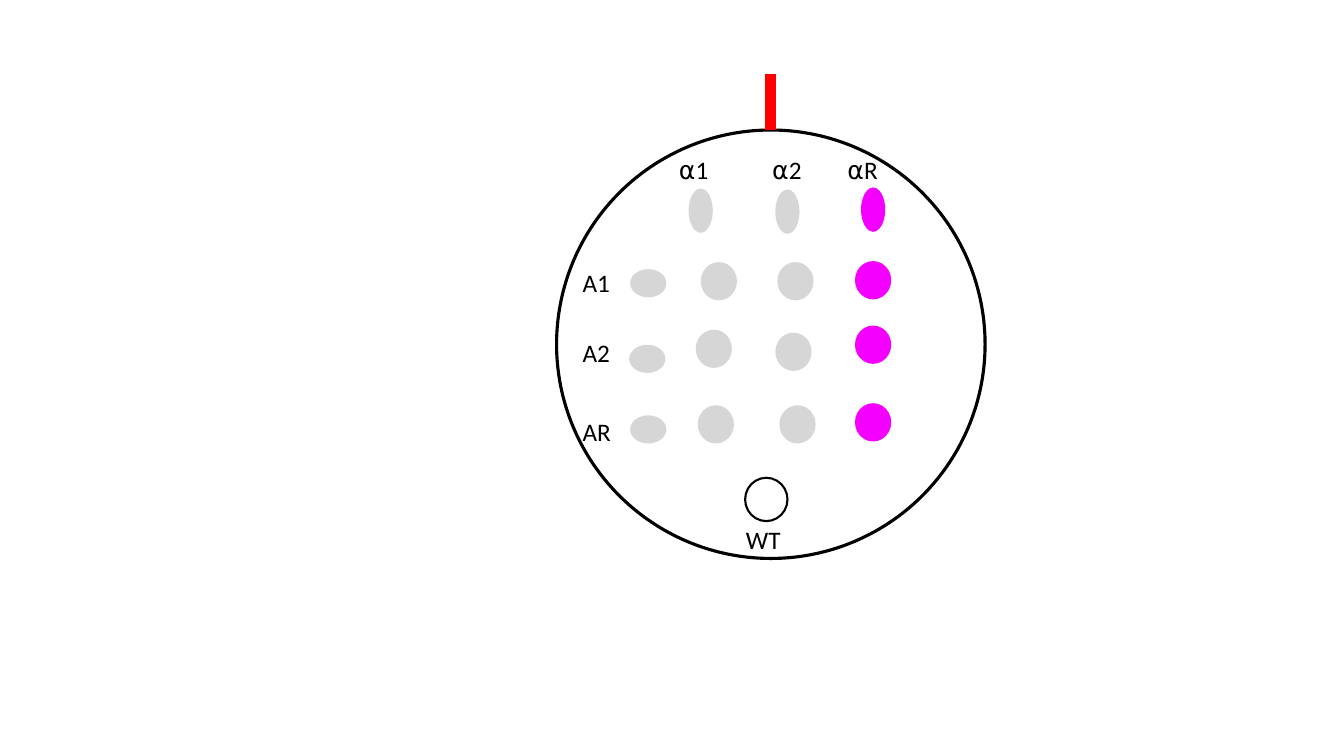
import pptx
import pptx.util
import pptx.dml.color
import pptx.enum.shapes
import pptx.enum.text
import pptx.oxml.ns
from lxml import etree
from pptx.util import Inches

RGB = pptx.dml.color.RGBColor.from_string
THEME = {
    "font": "Calibri", "size": pptx.util.Pt(18), "black": RGB("000000"),
    "magenta": RGB("F400FF"), "red": RGB("FF0000"), "spot_alpha": "16000",
}
qn = pptx.oxml.ns.qn

prs = pptx.Presentation()
prs.slide_width, prs.slide_height = Inches(13.33), Inches(7.5)
s = prs.slides.add_slide(prs.slide_layouts[6])


def add_oval(x, y, w, h, fill=None, line_pt=None):
    """Filled ovals have no outline; black fills are see-through."""
    sp = s.shapes.add_shape(pptx.enum.shapes.MSO_SHAPE.OVAL,
                            Inches(x), Inches(y), Inches(w), Inches(h))
    sp.shadow.inherit = False
    if fill is None:
        sp.fill.background()
        sp.line.color.rgb = THEME["black"]
        sp.line.width = pptx.util.Pt(line_pt)
        return
    sp.line.fill.background()
    sp.fill.solid()
    sp.fill.fore_color.rgb = THEME[fill]
    if fill == "black":
        color = sp.fill._xPr.find(qn("a:solidFill"))[0]
        etree.SubElement(color, qn("a:alpha"), val=THEME["spot_alpha"])


def add_label(text, x, y, w, align):
    tb = s.shapes.add_textbox(Inches(x), Inches(y), Inches(w), Inches(0.49))
    tf = tb.text_frame
    tf.word_wrap = True
    p = tf.paragraphs[0]
    p.text = text
    p.alignment = align
    p.font.name, p.font.size = THEME["font"], THEME["size"]
    p.font.color.rgb = THEME["black"]


# Plate outline and wild-type spot
add_oval(5.52, 1.29, 4.25, 4.25, line_pt=2.25)
add_oval(7.39, 4.74, 0.42, 0.43, line_pt=1.5)

# Column parents: tall ovals
for x, y, fill in [(6.83, 1.87, "black"), (7.69, 1.88, "black"), (8.54, 1.86, "magenta")]:
    add_oval(x, y, 0.24, 0.44, fill)

# Row parents: wide ovals
for x, y in [(6.25, 2.67), (6.24, 3.42), (6.25, 4.12)]:
    add_oval(x, y, 0.36, 0.28, "black")

# Crosses: one row of spots per row parent, the last column magenta
crosses = [
    [(6.95, 2.6), (7.71, 2.6), (8.48, 2.59)],
    [(6.9, 3.27), (7.69, 3.3), (8.48, 3.23)],
    [(6.92, 4.02), (7.73, 4.02), (8.48, 4)],
]
for row in crosses:
    for (x, y), fill in zip(row, ["black", "black", "magenta"]):
        add_oval(x, y, 0.36, 0.38, fill)

# Labels
ALIGN = pptx.enum.text.PP_ALIGN
for text, x, w in [("⍺1", 6.53, 0.7), ("⍺2", 7.39, 0.83), ("⍺R", 8.14, 0.83)]:
    add_label(text, x, 1.48, w, ALIGN.CENTER)
for text, x, y in [("A1", 5.68, 2.6), ("A2", 5.68, 3.3), ("AR", 5.68, 4.08), ("WT", 7.3, 5.15)]:
    add_label(text, x, y, 0.75, ALIGN.LEFT)

# Orientation mark at the top of the plate
mark = s.shapes.add_connector(pptx.enum.shapes.MSO_CONNECTOR.STRAIGHT,
                              Inches(7.64), Inches(0.73), Inches(7.64), Inches(1.29))
mark.line.color.rgb = THEME["red"]
mark.line.width = pptx.util.Pt(7.75)
etree.SubElement(mark._element.spPr, qn("a:effectLst"))

prs.save("out.pptx")
